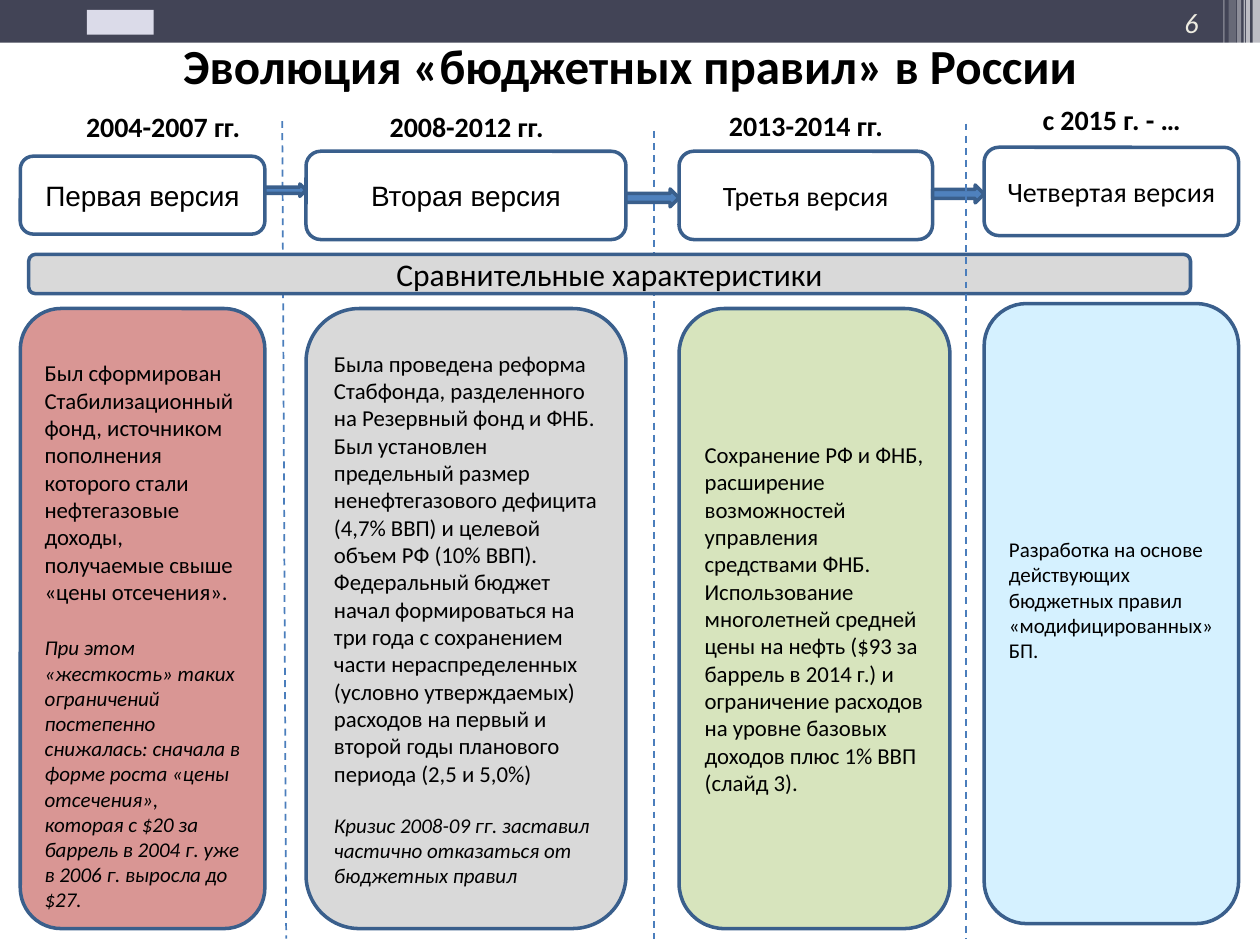
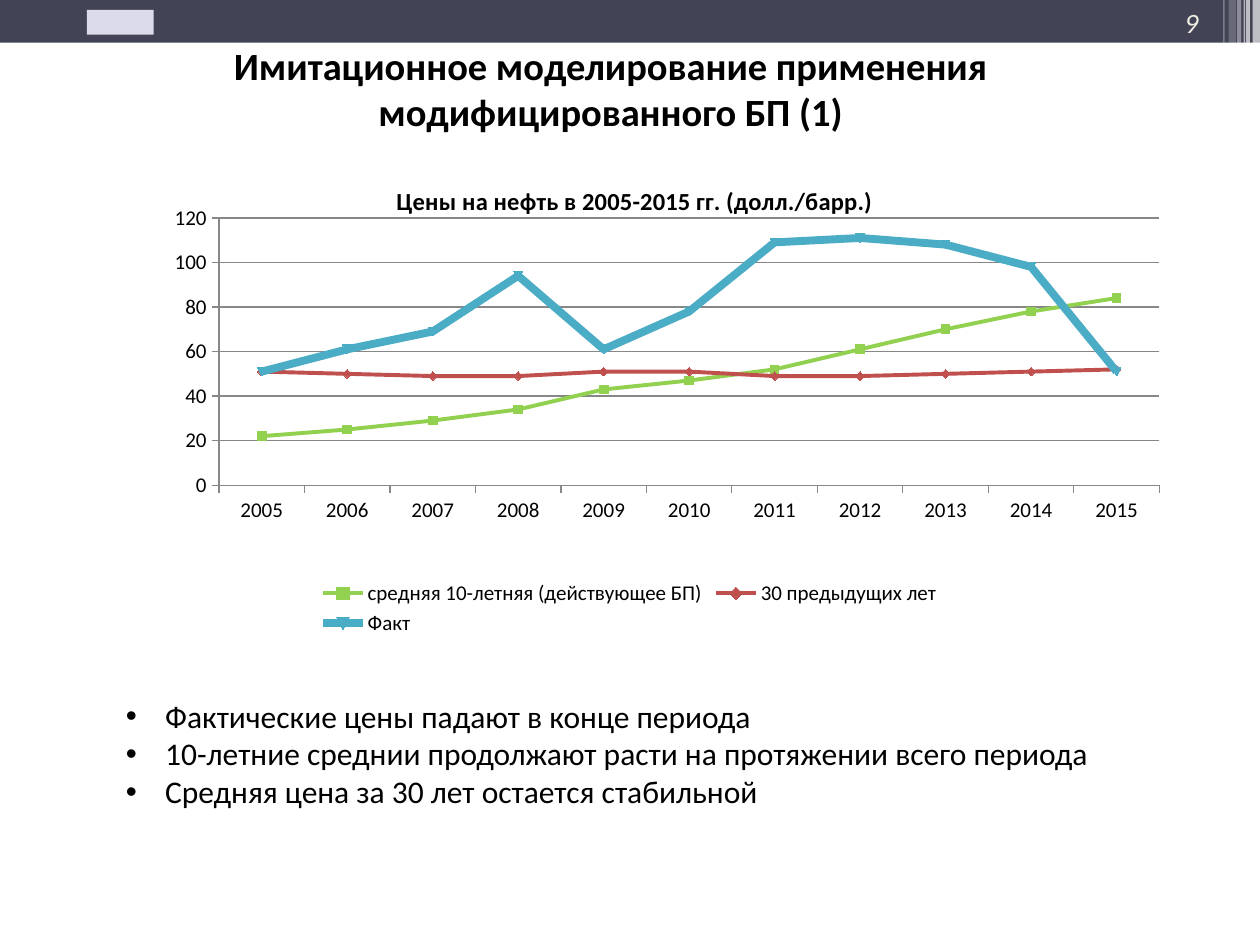
import pptx
import pptx.chart.data
import pptx.dml.color
import pptx.enum.chart
import pptx.enum.dml
import pptx.enum.shapes
import pptx.enum.text
import pptx.oxml.ns
import pptx.util
from lxml import etree

Cm, Pt = pptx.util.Cm, pptx.util.Pt
qn = pptx.oxml.ns.qn
SHAPE = pptx.enum.shapes.MSO_SHAPE
ALIGN = pptx.enum.text.PP_ALIGN
ANCHOR = pptx.enum.text.MSO_ANCHOR

COLORS = {
    "band": "424456", "white": "FFFFFF", "logo": "DBDBE9", "page": "EEECE1",
    "ink": "000000", "edge": "3A5F8C", "arrow": "4F81BD", "dash": "4B7EBC",
    "rose": "D99694", "gray": "D9D9D9", "green": "D7E4BD", "sky": "D5F1FF",
    "axis": "878787", "lime": "92D050", "red": "C0504D", "teal": "4BACC6",
}

STRIPES = [
    (25.25, 0.15, 1.73, 65), (25.12, 0.08, 1.73, 65), (25.07, 0.03, 1.73, 60),
    (24.94, 0.08, 1.73, 40), (24.77, 0.15, 1.63, 20), (24.66, 0.03, 1.63, 30),
]

STAGES = [
    {"years": "2004-2007 гг.", "label": (0.99, 2.16, 4.6),
     "name": "Первая версия", "font": "Arial", "head": (0.41, 3.15, 4.93, 1.57),
     "body": (0.41, 6.22, 4.93, 12.5), "fill": "rose", "inset": (0.82, 0.13),
     "text": [
         ("Был сформирован Стабилизационный фонд, источником пополнения которого стали "
          "нефтегазовые доходы, получаемые свыше «цены отсечения».", 13, False, 0),
         ("При этом «жесткость» таких ограничений постепенно снижалась: сначала в форме "
          "роста «цены отсечения», которая с $20 за баррель в 2004 г. уже в 2006 г. "
          "выросла до $27.", 12, True, 17)]},
    {"years": "2008-2012 гг.", "label": (6.83, 2.16, 5.16),
     "name": "Вторая версия", "font": "Arial", "head": (6.17, 3.05, 6.45, 1.78),
     "body": (6.17, 6.22, 6.45, 12.5), "fill": "gray", "inset": (0.13, 0.13),
     "text": [
         ("Была проведена реформа Стабфонда, разделенного на Резервный фонд и ФНБ.",
          13, False, 0),
         ("Был установлен предельный размер ненефтегазового дефицита (4,7% ВВП) и "
          "целевой объем РФ (10% ВВП).", 13, False, 0),
         ("Федеральный бюджет начал формироваться на три года с сохранением части "
          "нераспределенных (условно утверждаемых) расходов на первый и второй годы "
          "планового периода (2,5 и 5,0%)", 13, False, 0),
         ("Кризис 2008-09 гг. заставил частично отказаться от бюджетных правил",
          12, True, 14.5)]},
    {"years": "2013-2014 гг.", "label": (13.67, 2.13, 5.16),
     "name": "Третья версия", "font": "Calibri", "head": (13.69, 3.05, 5.11, 1.78),
     "body": (13.69, 6.22, 5.46, 12.5), "fill": "green", "inset": (0.13, 0.13),
     "text": [
         ("Сохранение РФ и ФНБ, расширение возможностей управления средствами ФНБ.",
          13, False, 0),
         ("Использование многолетней средней цены на нефть ($93 за баррель в 2014 г.) и "
          "ограничение расходов на уровне базовых доходов плюс 1% ВВП (слайд 3).",
          13, False, 0)]},
    {"years": "с 2015 г. - …", "label": (20.24, 2.01, 4.34),
     "name": "Четвертая версия", "font": "Calibri", "head": (19.84, 2.97, 5.13, 1.78),
     "body": (19.84, 6.12, 5.13, 12.5), "fill": "sky", "inset": (0.13, 0.69),
     "text": [
         ("Разработка на основе действующих бюджетных правил «модифицированных» БП.",
          12, False, 0)]},
]
ARROWS = [(3.71, 0.25), (3.81, 0.36), (3.73, 0.36)]
RULES = [(5.69, 2.44, 5.77), (13.18, 2.64, 13.18), (19.48, 2.49, 19.48)]

YEARS = [str(year) for year in range(2005, 2016)]
PRICES = [
    ("средняя 10-летняя (действующее БП)", "lime", 2.25,
     [22, 25, 29, 34, 43, 47, 52, 61, 70, 78, 84]),
    ("30 предыдущих лет", "red", 2.25,
     [51, 50, 49, 49, 51, 51, 49, 49, 50, 51, 52]),
    ("Факт", "teal", 4.5,
     [51, 61, 69, 94, 61, 78, 109, 111, 108, 98, 51]),
]
POINTS = [
    "Фактические цены падают в конце периода",
    "10-летние среднии продолжают расти на протяжении всего периода",
    "Средняя цена за 30 лет остается стабильной",
]


def rgb(name):
    return pptx.dml.color.RGBColor.from_string(COLORS[name])


def style(font, size, color="ink", bold=False, slant=False, face="Calibri"):
    font.name, font.size = face, Pt(size)
    font.bold, font.italic = bold, slant
    font.color.rgb = rgb(color)


def write(shape, text, size, align=ALIGN.CENTER, first=True, before=0, **look):
    frame = shape.text_frame
    frame.word_wrap = True
    para = frame.paragraphs[0] if first else frame.add_paragraph()
    para.alignment = align
    if before:
        para.space_before = Pt(before)
    run = para.add_run()
    run.text = text
    style(run.font, size, **look)
    return para


def draw(slide, kind, box, fill=None, edge=None):
    shape = slide.shapes.add_shape(kind, *map(Cm, box))
    shape.shadow.inherit = False
    if fill:
        shape.fill.solid()
        shape.fill.fore_color.rgb = rgb(fill)
    else:
        shape.fill.background()
    if edge:
        shape.line.color.rgb = rgb(edge)
        shape.line.width = Pt(2)
    else:
        shape.line.fill.background()
    shape.text_frame.vertical_anchor = ANCHOR.MIDDLE
    return shape


def label(slide, box, text, size, **look):
    area = slide.shapes.add_textbox(*map(Cm, box))
    area.text_frame.vertical_anchor = ANCHOR.MIDDLE
    write(area, text, size, **look)


def start(deck, title, box, size, page):
    slide = deck.slides.add_slide(deck.slide_layouts[6])
    draw(slide, SHAPE.RECTANGLE, (0, 0, 25.4, 0.86), "band")
    for left, width, height, alpha in STRIPES:
        stripe = draw(slide, SHAPE.RECTANGLE, (left, 0, width, height), "white")
        tint = stripe.fill._xPr.find(".//" + qn("a:srgbClr"))
        etree.SubElement(tint, qn("a:alpha"), val=str(alpha * 1000))
    draw(slide, SHAPE.RECTANGLE, (1.75, 0.2, 1.35, 0.5), "logo")
    label(slide, box, title, size, bold=True)
    label(slide, (18.49, -0.05, 5.92, 1.02), page, 16,
          align=ALIGN.RIGHT, color="page", slant=True)
    return slide


def divide(slide, rules):
    for left, top, foot in rules:
        rule = slide.shapes.add_connector(
            pptx.enum.shapes.MSO_CONNECTOR.STRAIGHT,
            Cm(left), Cm(top), Cm(foot), Cm(18.92))
        rule.line.color.rgb = rgb("dash")
        rule.line.width = Pt(1)
        rule.line.dash_style = pptx.enum.dml.MSO_LINE.DASH
        etree.SubElement(rule._element.spPr, qn("a:effectLst"))


def stages(deck):
    slide = start(deck, "Эволюция «бюджетных правил» в России",
                  (0, 0.71, 25.4, 1.19), 28, "6")
    divide(slide, RULES[:2])
    for stage in STAGES:
        tag = draw(slide, SHAPE.ROUNDED_RECTANGLE, (*stage["label"], 0.79))
        write(tag, stage["years"], 16, bold=True)
        head = draw(slide, SHAPE.ROUNDED_RECTANGLE, stage["head"], edge="edge")
        write(head, stage["name"], 16, face=stage["font"])
        body = draw(slide, SHAPE.ROUNDED_RECTANGLE, stage["body"], stage["fill"], "edge")
        top, foot = stage["inset"]
        body.text_frame.margin_top = Cm(top)
        body.text_frame.margin_bottom = Cm(foot)
        for i, (text, size, slant, gap) in enumerate(stage["text"]):
            write(body, text, size, ALIGN.LEFT, i == 0, gap, slant=slant)
    for here, after, (top, height) in zip(STAGES, STAGES[1:], ARROWS):
        left = here["head"][0] + here["head"][2]
        width = after["head"][0] - left
        draw(slide, SHAPE.RIGHT_ARROW, (left, top, width, height), "arrow", "edge")
    bar = draw(slide, SHAPE.ROUNDED_RECTANGLE, (0.58, 5.13, 23.42, 0.79), "gray", "edge")
    write(bar, "Сравнительные характеристики", 18)
    divide(slide, RULES[2:])


def place(node, **spots):
    layout = node.find(qn("c:layout"))
    if layout is None:
        layout = etree.Element(qn("c:layout"))
        node.insert(0, layout)
    manual = etree.SubElement(layout, qn("c:manualLayout"))
    for key, val in spots.items():
        etree.SubElement(manual, qn("c:" + key), val=str(val))


def graph(slide):
    data = pptx.chart.data.CategoryChartData(number_format="0")
    data.categories = YEARS
    for name, _, _, vals in PRICES:
        data.add_series(name, vals)
    chart = slide.shapes.add_chart(
        pptx.enum.chart.XL_CHART_TYPE.LINE_MARKERS,
        Cm(1.8), Cm(3.12), Cm(21.79), Cm(9.8), data).chart
    style(chart.font, 12)
    chart.has_title = True
    para = chart.chart_title.text_frame.paragraphs[0]
    run = para.add_run()
    run.text = "Цены на нефть в 2005-2015 гг. (долл./барр.)"
    style(run.font, 14, bold=True)
    place(chart.chart_title._element, xMode="edge", yMode="edge", x=0.28, y=0.05)
    place(chart._chartSpace.chart.plotArea, layoutTarget="inner", xMode="edge",
          yMode="edge", x=0.12, y=0.13, w=0.87, h=0.55)
    chart.has_legend = True
    chart.legend.position = pptx.enum.chart.XL_LEGEND_POSITION.BOTTOM
    chart.legend.include_in_layout = False
    style(chart.legend.font, 12)
    scale = chart.value_axis
    scale.minimum_scale, scale.maximum_scale, scale.major_unit = 0, 120, 20
    scale.has_major_gridlines = True
    scale.major_gridlines.format.line.color.rgb = rgb("axis")
    for axis in (scale, chart.category_axis):
        axis.major_tick_mark = pptx.enum.chart.XL_TICK_MARK.OUTSIDE
        axis.format.line.color.rgb = rgb("axis")
        style(axis.tick_labels.font, 12)
    chart.plots[0].vary_by_categories = False
    for line, (_, color, width, _) in zip(chart.plots[0].series, PRICES):
        line.smooth = False
        line.format.line.color.rgb = rgb(color)
        line.format.line.width = Pt(width)
        line.marker.size = 5
        line.marker.format.fill.solid()
        line.marker.format.fill.fore_color.rgb = rgb(color)
        line.marker.format.line.color.rgb = rgb(color)


def model(deck):
    slide = start(deck, "Имитационное моделирование применения модифицированного БП (1)",
                  (3.71, 0.71, 17.2, 2.13), 22, "9")
    graph(slide)
    notes = slide.shapes.add_textbox(Cm(2.29), Cm(13.92), Cm(20.8), Cm(2.57))
    for i, text in enumerate(POINTS):
        para = write(notes, text, 18, ALIGN.JUSTIFY, i == 0)
        props = para._p.get_or_add_pPr()
        props.set("marL", str(Cm(0.79)))
        props.set("indent", str(-Cm(0.79)))
        etree.SubElement(props, qn("a:buFont"), typeface="Arial")
        etree.SubElement(props, qn("a:buChar"), char="•")


def main():
    deck = pptx.Presentation()
    deck.slide_width, deck.slide_height = Cm(25.4), Cm(19.05)
    stages(deck)
    model(deck)
    deck.save("out.pptx")


if __name__ == "__main__":
    main()
